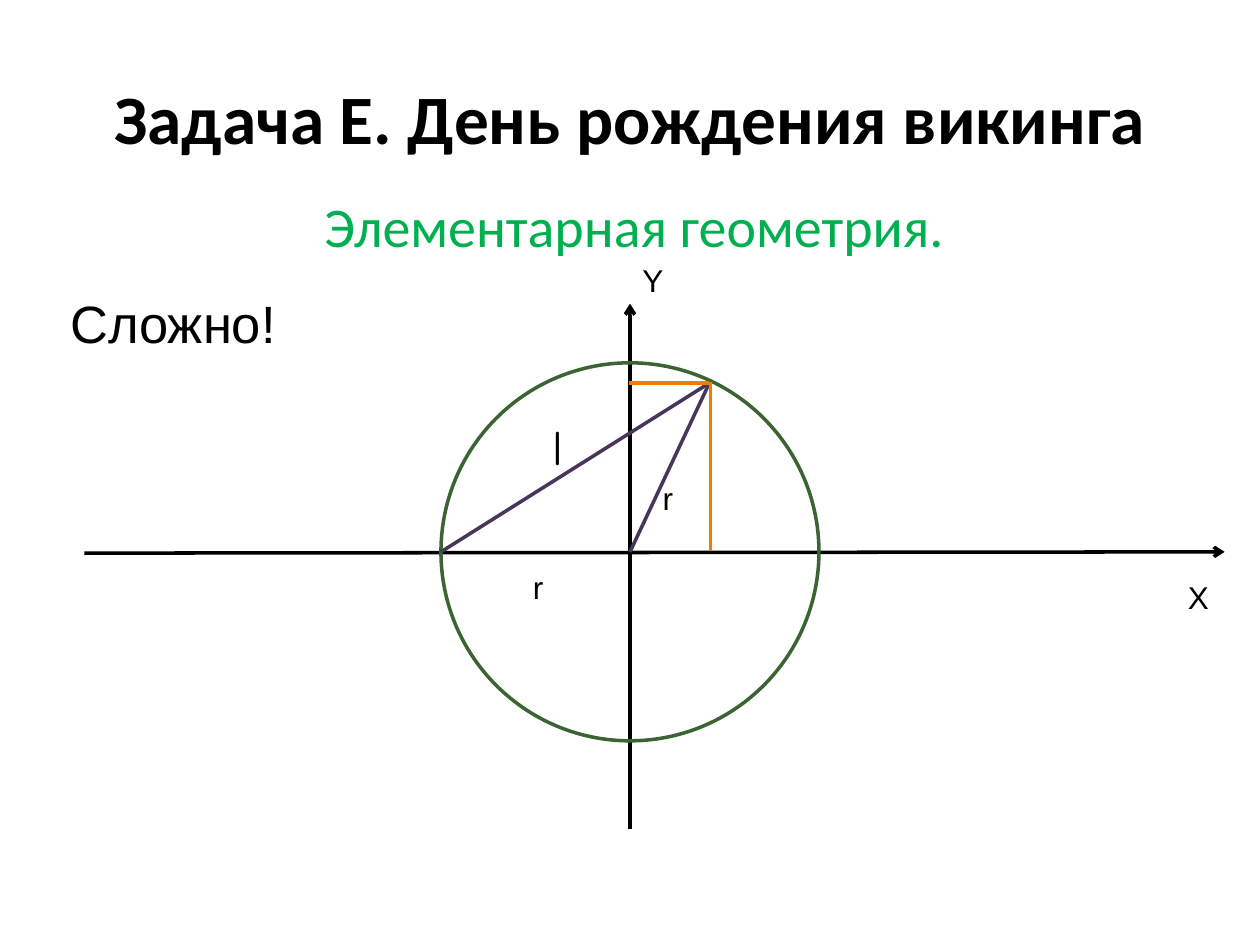
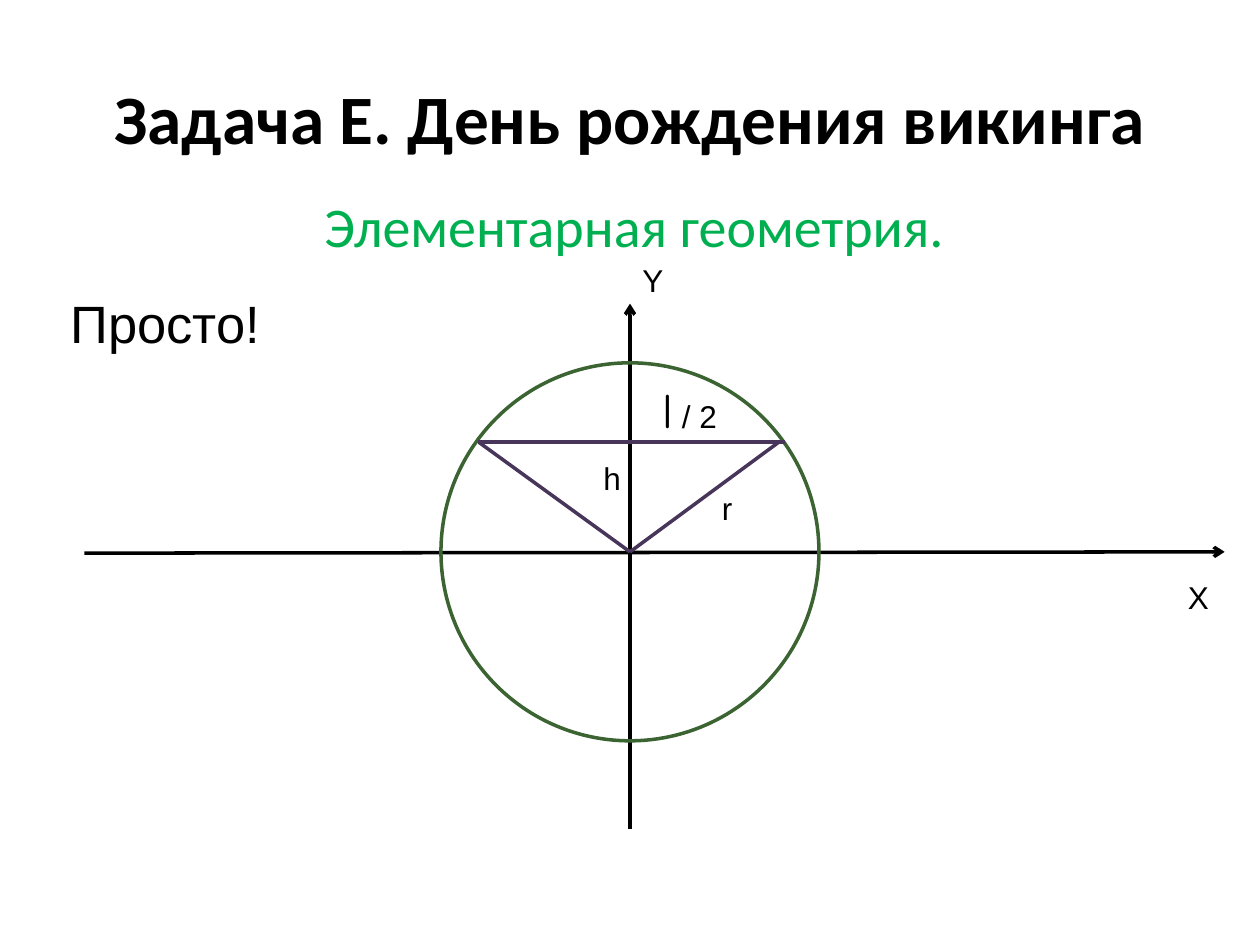
from lxml import etree
from pptx import Presentation, util as u
from pptx.dml.color import RGBColor
from pptx.enum import shapes, text
from pptx.oxml.ns import qn

# Colours and fonts
BLACK = RGBColor(0x00, 0x00, 0x00)
GREEN = RGBColor(0x00, 0xB0, 0x50)
CIRCLE_GREEN = RGBColor(0x3B, 0x64, 0x32)
PURPLE = RGBColor(0x48, 0x36, 0x5A)
ORANGE = RGBColor(0xF0, 0x7C, 0x03)
HEADING, BODY, HAND = "Calibri", "Arial", "Comic Neue"

# Grid of square cells
COLUMNS, ROWS = 100, 75
CELL = u.Inches(0.1)

# Geometry of the drawing, in cells
CENTRE = (50, 43.8)
RADIUS = 15


def cells(*counts):
    return [round(count * CELL) for count in counts]


def add_text(page, area, runs, wrap=True, centred=False, middle=False, grow=True):
    """Runs are (words, size, font, colour, bold) tuples."""
    box = page.shapes.add_textbox(*cells(*area))
    frame = box.text_frame
    frame.word_wrap = wrap
    frame.auto_size = (text.MSO_AUTO_SIZE.SHAPE_TO_FIT_TEXT if grow
                       else text.MSO_AUTO_SIZE.NONE)
    if middle:
        frame.vertical_anchor = text.MSO_ANCHOR.MIDDLE
    para = frame.paragraphs[0]
    para.alignment = text.PP_ALIGN.CENTER if centred else text.PP_ALIGN.LEFT
    for words, size, font, colour, bold in runs:
        span = para.add_run()
        span.text = words
        span.font.size = u.Pt(size)
        span.font.name = font
        span.font.color.rgb = colour
        span.font.bold = bold


def add_label(page, left, top, width, words):
    add_text(page, (left, top, width, 4), [(words, 18, BODY, BLACK, False)], wrap=False)


def add_length_label(page, left, top, width, rest=""):
    """The handwritten letter l, with an optional plain ending."""
    runs = [("l", 28, HAND, BLACK, False)]
    if rest:
        runs.append((rest, 18, BODY, BLACK, False))
    add_text(page, (left, top, width, 5.7), runs, wrap=False)


def add_line(page, start, end, colour, arrow=False):
    line = page.shapes.add_connector(shapes.MSO_CONNECTOR.STRAIGHT, *cells(*start, *end))
    line.line.color.rgb = colour
    line.line.width = u.Pt(2)
    if arrow:
        outline = line.line._get_or_add_ln()
        etree.SubElement(outline, qn("a:tailEnd"), type="arrow")
    etree.SubElement(line._element.spPr, qn("a:effectLst"))


def add_circle(page):
    x, y = CENTRE
    circle = page.shapes.add_shape(
        shapes.MSO_SHAPE.OVAL,
        *cells(x - RADIUS, y - RADIUS, 2 * RADIUS, 2 * RADIUS))
    circle.shadow.inherit = False
    circle.fill.background()
    circle.line.color.rgb = CIRCLE_GREEN
    circle.line.width = u.Pt(2)


def add_base(deck, verdict):
    """Title, subtitle, verdict, axes and circle shared by both slides."""
    page = deck.slides.add_slide(deck.slide_layouts[6])
    add_text(page, (5, 3, 90, 12.5),
             [("Задача E. День рождения викинга", 39.6, HEADING, BLACK, True)],
             centred=True, middle=True, grow=False)
    add_text(page, (2.3, 14.7, 96.1, 58.8),
             [("Элементарная геометрия.", 32, HEADING, GREEN, False)],
             centred=True, grow=False)
    add_line(page, (50, 65.8), (50, 24.1), BLACK, arrow=True)
    add_line(page, (6.7, 43.9), (97.2, 43.8), BLACK, arrow=True)
    add_label(page, 50, 20.2, 3.7, "Y")
    add_label(page, 93.3, 45.4, 3.7, "X")
    add_circle(page)
    add_text(page, (4.6, 22.6, 28.1, 6.1), [(verdict, 30, BODY, BLACK, False)])
    return page


def draw_hard_way(deck):
    page = add_base(deck, "Сложно!")
    x, y = point = (56.3, 30.4)
    # Chord and radius to the point
    for start in ((CENTRE[0] - RADIUS, CENTRE[1]), CENTRE):
        add_line(page, start, point, PURPLE)
    # Projections of the point on the axes
    add_line(page, (x + 0.1, y - 0.1), (x + 0.1, CENTRE[1] - 0.1), ORANGE)
    add_line(page, point, (CENTRE[0] - 0.1, y), ORANGE)
    for left, top in ((41.3, 44.6), (51.6, 37.5)):
        add_label(page, left, top, 2.9, "r")
    add_length_label(page, 42.9, 32.6, 2.9)


def draw_easy_way(deck):
    page = add_base(deck, "Просто!")
    chord_row = 35.1
    # Level chord and the radii to its ends
    add_line(page, (37.9, chord_row), (62.3, chord_row), PURPLE)
    for column in (61.8, 38):
        add_line(page, CENTRE, (column, chord_row), PURPLE)
    add_label(page, 56.3, 38.3, 2.9, "r")
    add_length_label(page, 51.6, 29.6, 6.4, " / 2")
    add_label(page, 46.9, 35.9, 3.4, "h")


def main():
    deck = Presentation()
    deck.slide_width, deck.slide_height = cells(COLUMNS, ROWS)
    draw_hard_way(deck)
    draw_easy_way(deck)
    deck.save("out.pptx")


if __name__ == "__main__":
    main()
